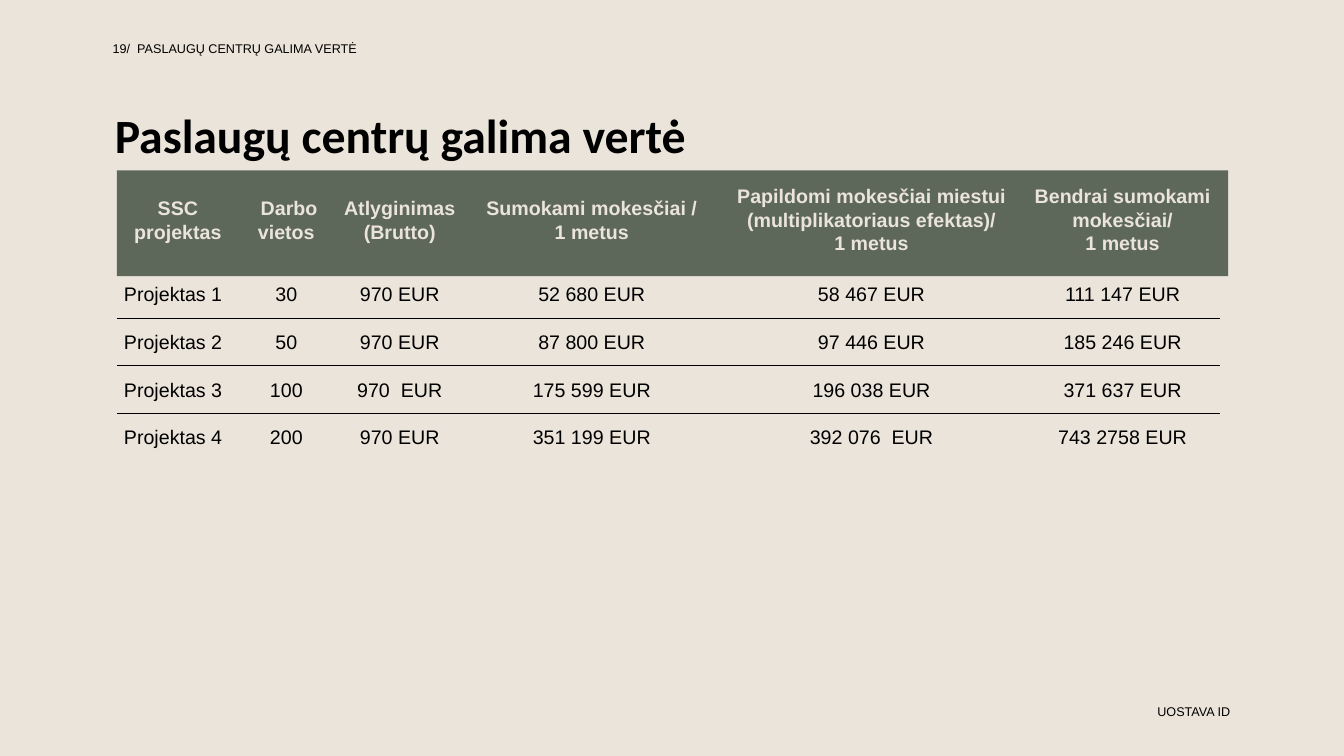
from dataclasses import dataclass

from lxml.etree import SubElement
from pptx import Presentation
from pptx.dml.color import RGBColor
from pptx.enum.shapes import MSO_SHAPE as Shape
from pptx.enum.text import MSO_ANCHOR as Anchor, PP_ALIGN as Align
from pptx.oxml.ns import qn
from pptx.util import Inches, Pt

SLIDE_W, SLIDE_H = 13.33, 7.5
BEIGE, GREEN, BLACK = "EAE4DA", "5E685A", "000000"


@dataclass(frozen=True)
class Box:
    """Left, top, width and height in percent of the slide."""
    x: float
    y: float
    w: float
    h: float

    def emu(self) -> tuple:
        return across(self.x), down(self.y), across(self.w), down(self.h)


@dataclass(frozen=True)
class Style:
    size: float
    font: str = "Arial"
    color: str = BLACK
    bold: bool = False
    align: Align = Align.LEFT
    spacing: float = 1.0


@dataclass(frozen=True)
class Label:
    text: str
    box: Box
    style: Style
    anchor: Anchor = Anchor.TOP


def across(percent: float) -> int:
    return Inches(SLIDE_W * percent / 100)


def down(percent: float) -> int:
    return Inches(SLIDE_H * percent / 100)


def rgb(color: str) -> RGBColor:
    return RGBColor.from_string(color)


def write(tf, text: str, style: Style) -> None:
    for i, line in enumerate(text.split("\n")):
        p = tf.add_paragraph() if i else tf.paragraphs[0]
        p.alignment, p.line_spacing = style.align, style.spacing
        r = p.add_run()
        r.text = line
        r.font.size, r.font.name, r.font.bold = Pt(style.size), style.font, style.bold
        r.font.color.rgb = rgb(style.color)


def add_label(s, label: Label) -> None:
    tf = s.shapes.add_textbox(*label.box.emu()).text_frame
    tf.word_wrap, tf.vertical_anchor = True, label.anchor
    write(tf, label.text, label.style)


def set_borders(cell, ruled: set[str]) -> None:
    """Rule the named sides in black and clear the others."""
    tc_pr = cell._tc.get_or_add_tcPr()
    for i, side in enumerate("LRTB"):
        ln = SubElement(tc_pr, qn(f"a:ln{side}"), w=str(Pt(1)))
        if side in ruled:
            fill = SubElement(ln, qn("a:solidFill"))
            SubElement(fill, qn("a:srgbClr"), val=BLACK)
        else:
            SubElement(ln, qn("a:noFill"))
        tc_pr.insert(i, ln)


def add_value_table(s, box: Box, columns: list[float], rows: list[float],
                    cells: list[list[str]]) -> None:
    table = s.shapes.add_table(len(rows), len(columns), *box.emu()).table
    table.first_row = table.horz_banding = False
    for column, width in zip(table.columns, columns):
        column.width = across(width)
    for row, height in zip(table.rows, rows):
        row.height = down(height)
    for i, texts in enumerate(cells):
        for j, text in enumerate(texts):
            cell = table.cell(i, j)
            cell.fill.background()
            cell.vertical_anchor = Anchor.MIDDLE
            cell.margin_left = cell.margin_right = Inches(0.07)
            cell.margin_top = cell.margin_bottom = 0
            style = HEADER if i == 0 else NAME if j == 0 else VALUE
            write(cell.text_frame, text, style)
            ruled = {"T"} if i > 1 else set()
            if 0 < i < len(rows) - 1:
                ruled.add("B")
            set_borders(cell, ruled)


# Text styles
HEADER = Style(14, color=BEIGE, bold=True, align=Align.CENTER, spacing=1.07)
VALUE = Style(14, align=Align.CENTER, spacing=1.07)
NAME = Style(14, align=Align.JUSTIFY, spacing=1.07)
TITLE = Style(34.1, font="Calibri", bold=True, spacing=0.9)

# Content
LABELS = [
    Label("UOSTAVA ID", Box(73.82, 92.4, 18.45, 3.33), Style(9, align=Align.RIGHT)),
    Label("Paslaugų centrų galima vertė", Box(7.8, 8.8, 85, 18.8), TITLE, Anchor.MIDDLE),
    Label("19/  PASLAUGŲ CENTRŲ GALIMA VERTĖ", Box(7.65, 4.8, 24, 3.33), Style(9)),
]
HEADER_BAND = Box(8.7, 22.53, 82.67, 14)
TABLE_BOX = Box(8.7, 22.53, 82.07, 38.27)
COLUMNS = [9.08, 7.05, 9.83, 18.75, 22.88, 14.48]
ROWS = [13.07, 6.53] + [6.27] * 3
CELLS = [
    ["SSC projektas", " Darbo vietos", "Atlyginimas\n(Brutto)",
     "Sumokami mokesčiai /\n1 metus",
     "Papildomi mokesčiai miestui\n(multiplikatoriaus efektas)/\n1 metus",
     "Bendrai sumokami mokesčiai/\n1 metus"],
    ["Projektas 1", "30", "970 EUR", "52 680 EUR", "58 467 EUR", "111 147 EUR"],
    ["Projektas 2", "50", "970 EUR", "87 800 EUR", "97 446 EUR", "185 246 EUR"],
    ["Projektas 3", "100", "970  EUR", "175 599 EUR", "196 038 EUR", "371 637 EUR"],
    ["Projektas 4", "200", "970 EUR", "351 199 EUR", "392 076  EUR", "743 2758 EUR"],
]


def main() -> None:
    prs = Presentation()
    prs.slide_width, prs.slide_height = Inches(SLIDE_W), Inches(SLIDE_H)
    s = prs.slides.add_slide(prs.slide_layouts[6])
    s.background.fill.solid()
    s.background.fill.fore_color.rgb = rgb(BEIGE)

    # Header band behind the table
    sp = s.shapes.add_shape(Shape.RECTANGLE, *HEADER_BAND.emu())
    sp.shadow.inherit = False
    sp.fill.solid()
    sp.fill.fore_color.rgb = rgb(GREEN)
    sp.line.fill.background()

    # Table, title, running head and footer
    add_value_table(s, TABLE_BOX, COLUMNS, ROWS, CELLS)
    for label in LABELS:
        add_label(s, label)
    prs.save("out.pptx")


if __name__ == "__main__":
    main()
